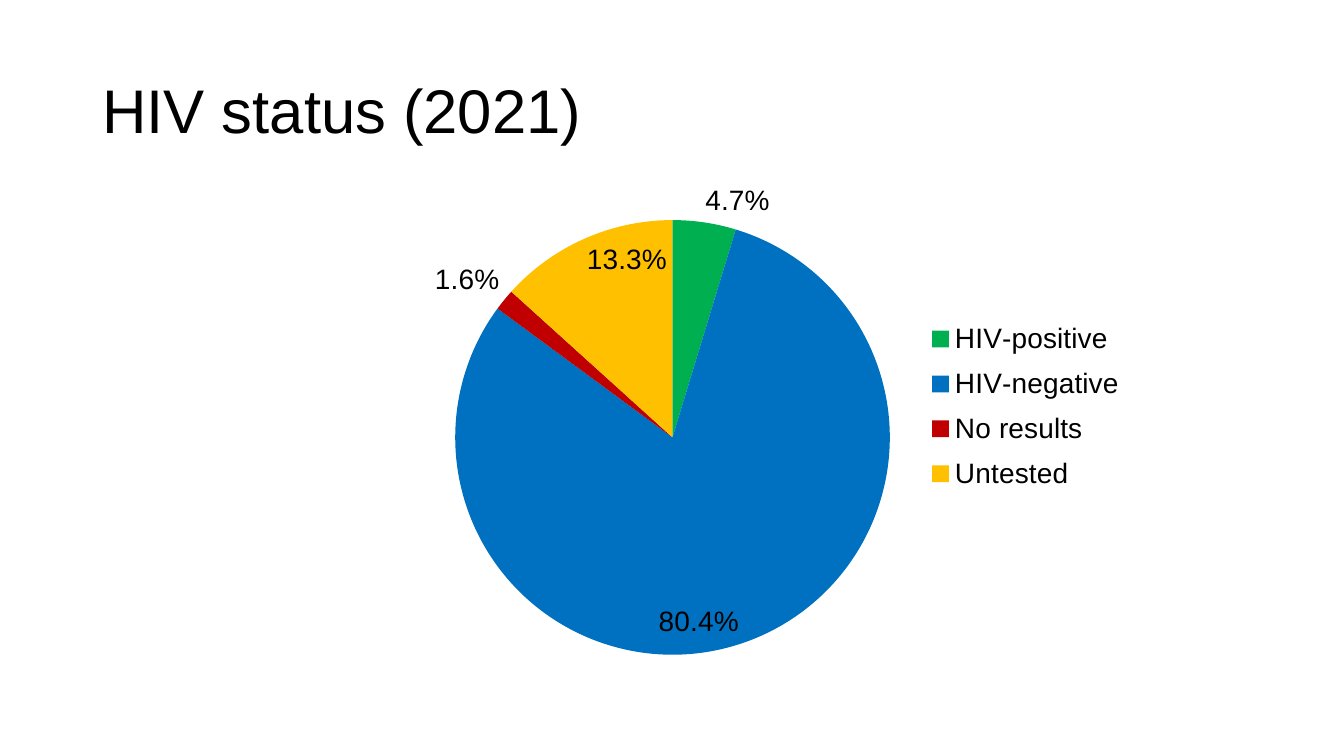
from lxml.etree import SubElement
from pptx import Presentation
from pptx.chart.data import CategoryChartData
from pptx.dml.color import RGBColor
from pptx.enum.chart import XL_CHART_TYPE, XL_LABEL_POSITION, XL_LEGEND_POSITION
from pptx.enum.text import MSO_ANCHOR
from pptx.oxml.ns import qn
from pptx.util import Cm, Pt

FONT = "Arial"
COLORS = {
    "text": "000000",
    "HIV-positive": "00B050",
    "HIV-negative": "0070C0",
    "No results": "C00000",
    "Untested": "FFC000",
}
STATUS_SHARES = {
    "HIV-positive": 0.047,
    "HIV-negative": 0.804,
    "No results": 0.016,
    "Untested": 0.133,
}
SMALL_SHARE = 0.05  # slices below this carry their label outside


def color(name):
    return RGBColor.from_string(COLORS[name])


def style_font(font, size):
    font.name = FONT
    font.size = Pt(size)
    font.color.rgb = color("text")


def set_layout(parent, position, box, inner=False):
    """Place a chart part at (x, y, w, h), as fractions of the chart."""
    for layout in parent.findall(qn("c:layout")):
        parent.remove(layout)
    layout = SubElement(parent, qn("c:layout"))
    parent.insert(position, layout)
    manual = SubElement(layout, qn("c:manualLayout"))
    settings = [("layoutTarget", "inner")] if inner else []
    settings += [("xMode", "edge"), ("yMode", "edge")]
    settings += zip("xywh", box)
    for tag, value in settings:
        SubElement(manual, qn(f"c:{tag}")).set("val", str(value))


def add_title(slide, left, top, width, height, text):
    shape = slide.shapes.add_textbox(left, top, width, height)
    frame = shape.text_frame
    frame.word_wrap = True
    frame.vertical_anchor = MSO_ANCHOR.MIDDLE
    paragraph = frame.paragraphs[0]
    paragraph.line_spacing = 0.9
    run = paragraph.add_run()
    run.text = text
    style_font(run.font, 44)


def add_status_pie(slide, left, top, width, height):
    data = CategoryChartData(number_format="0.0%")
    data.categories = list(STATUS_SHARES)
    data.add_series("Series 1", list(STATUS_SHARES.values()))
    chart = slide.shapes.add_chart(
        XL_CHART_TYPE.PIE, left, top, width, height, data
    ).chart
    chart.has_title = False
    style_font(chart.font, 20)
    plot_area = chart._chartSpace.chart.plotArea
    set_layout(plot_area, 0, (0.313, 0.082, 0.375, 0.905), inner=True)

    # Slices and their labels
    plot = chart.plots[0]
    plot.vary_by_categories = True
    series = plot.series[0]
    labels = series.data_labels
    labels.show_value = True
    labels.number_format = "0.0%"
    labels.number_format_is_linked = False
    labels.position = XL_LABEL_POSITION.INSIDE_END
    style_font(labels.font, 20)
    for index, (status, share) in enumerate(STATUS_SHARES.items()):
        point = series.points[index]
        point.format.fill.solid()
        point.format.fill.fore_color.rgb = color(status)
        if share < SMALL_SHARE:
            label = point.data_label
            label.position = XL_LABEL_POSITION.OUTSIDE_END
            style_font(label.font, 20)

    # Legend
    chart.has_legend = True
    legend = chart.legend
    legend.position = XL_LEGEND_POSITION.RIGHT
    legend.include_in_layout = False
    style_font(legend.font, 20)
    set_layout(legend._element, 1, (0.715, 0.29, 0.18, 0.37))


def main():
    presentation = Presentation()
    presentation.slide_width = Cm(33.87)
    presentation.slide_height = Cm(19.05)
    slide = presentation.slides.add_slide(presentation.slide_layouts[6])
    left, width = Cm(2.33), Cm(29.21)
    add_title(slide, left, Cm(1.01), width, Cm(3.68), "HIV status (2021)")
    add_status_pie(slide, left, Cm(3.99), width, Cm(13.16))
    presentation.save("out.pptx")


if __name__ == "__main__":
    main()
